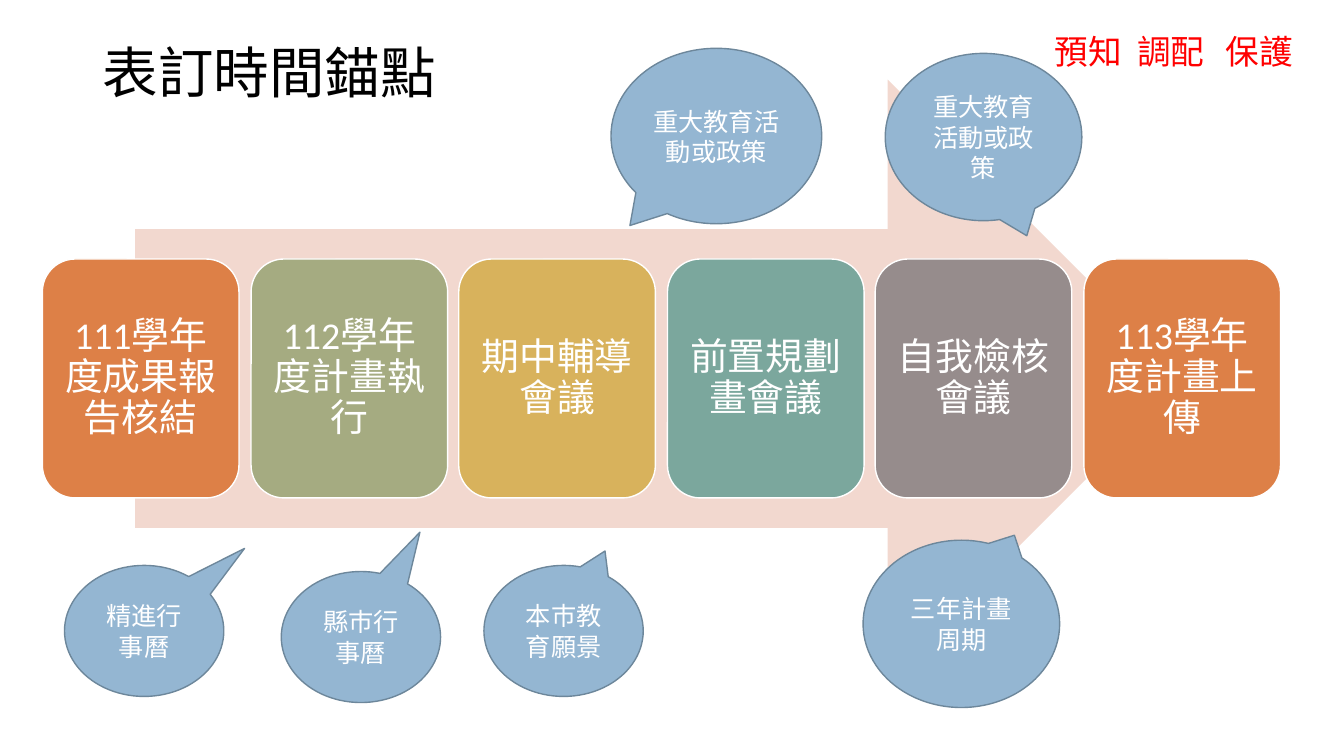
from pptx import Presentation
from pptx import util as u
from pptx.dml.color import RGBColor
from pptx.enum import shapes, text
from pptx.oxml import parse_xml
from pptx.oxml.ns import nsdecls

PX = 9144  # EMU per px, 100 px to the inch
FONT = "Calibri"
WHITE = RGBColor(0xFF, 0xFF, 0xFF)
BLACK = RGBColor(0, 0, 0)
RED = RGBColor(0xFF, 0, 0)
PINK = RGBColor(0xF2, 0xD8, 0xCF)
ORANGE = RGBColor(0xDD, 0x80, 0x47)
OLIVE = RGBColor(0xA5, 0xAB, 0x81)
GOLD = RGBColor(0xD8, 0xB2, 0x5C)
TEAL = RGBColor(0x7B, 0xA7, 0x9D)
GRAY = RGBColor(0x96, 0x8C, 0x8C)
BLUE = RGBColor(0x94, 0xB6, 0xD2)
SLATE = RGBColor(0x6D, 0x87, 0x9B)

STAGES = [
    ("111學年度成果報告核結", ORANGE),
    ("112學年度計畫執行", OLIVE),
    ("期中輔導會議", GOLD),
    ("前置規劃畫會議", TEAL),
    ("自我檢核會議", GRAY),
    ("113學年度計畫上傳", ORANGE),
]
# text, box, pointer tip as a share of width and height from the centre
CALLOUTS = [
    ("精進行事曆", (64, 561, 158, 130), (0.63, -0.63)),
    ("縣巿行事曆", (279, 567, 158, 130), (0.37, -0.8)),
    ("本巿教育願景", (480, 561, 158, 130), (0.26, -0.61)),
    ("重大教育活動或政策", (878, 53, 195, 166), (0.22, 0.59)),
    ("重大教育活動或政策", (606, 48, 209, 174), (-0.41, 0.51)),
    ("三年計畫周期", (856, 536, 195, 166), (0.27, -0.53)),
]


def emu(box):
    return [v * PX for v in box]


def write(s, words, size, color, align=text.PP_ALIGN.CENTER):
    tf = s.text_frame
    tf.word_wrap = True
    tf.text = words
    p = tf.paragraphs[0]
    p.alignment = align
    font = p.runs[0].font
    font.name, font.size, font.color.rgb = FONT, u.Pt(size), color
    return p


def add_filled(slide, kind, box, fill, line=None):
    s = slide.shapes.add_shape(kind, *emu(box))
    s.shadow.inherit = False
    s.fill.solid()
    s.fill.fore_color.rgb = fill
    if line is None:
        s.line.fill.background()
    else:
        s.line.color.rgb = line
        s.line.width = u.Pt(1)
    s.text_frame.vertical_anchor = text.MSO_ANCHOR.MIDDLE
    return s


def add_title(slide, box):
    s = slide.shapes.title
    s.left, s.top, s.width, s.height = emu(box)
    s.text_frame.vertical_anchor = text.MSO_ANCHOR.MIDDLE
    p = write(s, "表訂時間錨點", 39.6, BLACK, text.PP_ALIGN.LEFT)
    p.line_spacing = 0.9


def add_keywords(slide, box):
    """Three red keywords set apart by tab stops."""
    s = slide.shapes.add_textbox(*emu(box))
    p = write(s, "預知\t調配\t保護", 24, RED, text.PP_ALIGN.LEFT)
    stops = "".join(f'<a:tab pos="{x * PX}" algn="l"/>' for x in (82, 170))
    p._p.get_or_add_pPr().append(
        parse_xml(f'<a:tabLst {nsdecls("a")}>{stops}</a:tabLst>'))


def add_timeline(slide, box):
    """Big arrow with the stage cards spread evenly across the box."""
    left, top, width, height = box
    add_filled(slide, shapes.MSO_SHAPE.RIGHT_ARROW,
               (left + 92, top, width - 185, height), PINK)
    card_w, card_h = 195, 237
    step = (width - card_w) / (len(STAGES) - 1)
    for i, (words, fill) in enumerate(STAGES):
        card = (left + round(i * step), top + (height - card_h) // 2,
                card_w, card_h)
        s = add_filled(slide, shapes.MSO_SHAPE.ROUNDED_RECTANGLE,
                       card, fill, WHITE)
        tf = s.text_frame
        tf.margin_left = tf.margin_right = 11 * PX
        tf.margin_top = tf.margin_bottom = 11 * PX
        write(s, words, 27, WHITE).line_spacing = 0.9


def add_callout(slide, words, box, tip):
    s = add_filled(slide, shapes.MSO_SHAPE.OVAL_CALLOUT, box, BLUE, SLATE)
    s.adjustments[0], s.adjustments[1] = tip
    write(s, words, 18, WHITE)


def main():
    prs = Presentation()
    prs.slide_width, prs.slide_height = emu((1333, 750))
    slide = prs.slides.add_slide(prs.slide_layouts[5])
    add_title(slide, (92, 40, 452, 69))
    add_keywords(slide, (1036, 26, 269, 50))
    add_timeline(slide, (42, 79, 1228, 593))
    for callout in CALLOUTS:
        add_callout(slide, *callout)
    prs.save("out.pptx")


if __name__ == "__main__":
    main()
